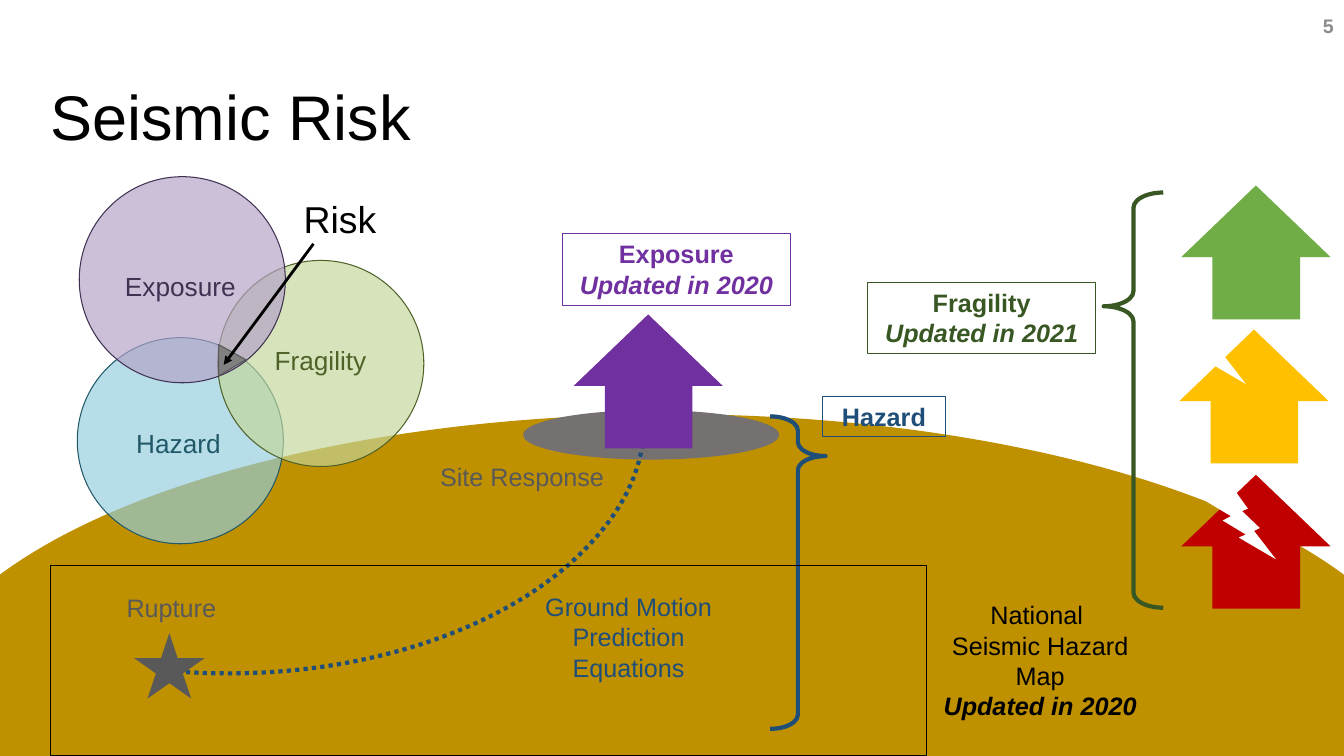
from dataclasses import dataclass
from typing import Any, Optional

from lxml.etree import SubElement
from pptx import Presentation
from pptx.dml.color import RGBColor
from pptx.enum.dml import MSO_LINE
from pptx.enum.shapes import MSO_CONNECTOR, MSO_SHAPE
from pptx.enum.text import MSO_ANCHOR, MSO_AUTO_SIZE, PP_ALIGN
from pptx.oxml.ns import qn
from pptx.util import Pt

FONT = "Arial"
PURPLE, NAVY, FOREST, GRAY, BLACK = "7030A0", "1F4E79", "385723", "595959", "000000"
BOLD = {"bold": True}
ITALIC = {"bold": True, "italic": True}


@dataclass
class Label:
    box: tuple
    lines: tuple
    color: str
    size: float = 18
    outline: bool = False
    inset: Optional[float] = None
    align: Any = PP_ALIGN.CENTER
    anchor: Any = MSO_ANCHOR.TOP


@dataclass
class House:
    left: float
    top: float
    color: str
    crack: Optional[tuple] = None


@dataclass
class Circle:
    name: str
    left: float
    top: float
    fill: str
    ink: str
    label_left: float
    label_top: float


@dataclass
class Brace:
    box: tuple
    color: str
    bend: float
    point: float
    rotation: float = 0


def rgb(code: str) -> RGBColor:
    return RGBColor.from_string(code)


def assign(target: Any, values: dict) -> None:
    for key, value in values.items():
        setattr(target, key, value)


def style_font(font: Any, size: float, color: str, **extra: Any) -> None:
    assign(font, {"name": FONT, "size": Pt(size), **extra})
    font.color.rgb = rgb(color)


def paint(shape: Any, fill: Optional[str] = None, line: Optional[str] = None,
          width: float = 0.75, opacity: int = 100) -> Any:
    shape.shadow.inherit = False
    if fill:
        shape.fill.solid()
        shape.fill.fore_color.rgb = rgb(fill)
        if opacity < 100:
            tint = shape.fill._xPr.find(qn("a:solidFill"))[0]
            SubElement(tint, qn("a:alpha")).set("val", str(opacity * 1000))
    else:
        shape.fill.background()
    if line:
        shape.line.color.rgb = rgb(line)
        shape.line.width = Pt(width)
    else:
        shape.line.fill.background()
    return shape


def draw(shapes: Any, kind: Any, box: tuple, **look: Any) -> Any:
    return paint(shapes.add_shape(kind, *map(Pt, box)), **look)


def add_arrowhead(line: Any) -> None:
    SubElement(line._get_or_add_ln(), qn("a:tailEnd")).set("type", "triangle")


def draw_label(shapes: Any, label: Label) -> None:
    area = shapes.add_textbox(*map(Pt, label.box))
    frame = area.text_frame
    assign(frame, {"word_wrap": True, "vertical_anchor": label.anchor})
    if label.inset is not None:
        sides = ("margin_left", "margin_right", "margin_top", "margin_bottom")
        assign(frame, dict.fromkeys(sides, Pt(label.inset)))
    if label.outline:
        paint(area, line=label.color)
    for index, (wording, extra) in enumerate(label.lines):
        paragraph = frame.add_paragraph() if index else frame.paragraphs[0]
        paragraph.alignment = label.align
        run = paragraph.add_run()
        run.text = wording
        style_font(run.font, label.size, label.color, **extra)


def draw_house(shapes: Any, house: House) -> None:
    walls = (house.left + 22.3, house.top + 36.7, 62.6, 59)
    draw(shapes, MSO_SHAPE.RECTANGLE, walls, fill=house.color)
    roof = (house.left, house.top, 106.6, 51.1)
    draw(shapes, MSO_SHAPE.ISOSCELES_TRIANGLE, roof, fill=house.color)
    if house.crack:
        draw(shapes, MSO_SHAPE.LIGHTNING_BOLT, (*house.crack, 49.7, 50.4), fill="FFFFFF")


def draw_brace(shapes: Any, brace: Brace) -> None:
    shape = draw(shapes, MSO_SHAPE.LEFT_BRACE, brace.box, line=brace.color, width=3)
    shape.adjustments[0], shape.adjustments[1] = brace.bend, brace.point
    shape.rotation = brace.rotation


def draw_ground(shapes: Any) -> None:
    draw(shapes, MSO_SHAPE.OVAL, (-65.5, 295.9, 1090.8, 436.3), fill="BF9000")
    draw(shapes, MSO_SHAPE.OVAL, (373.7, 293, 182.9, 35.3), fill="767171")
    wave = draw(shapes, MSO_SHAPE.ARC, (-134.6, 113.8, 595.4, 367.2), line=NAVY, width=3)
    wave.adjustments[0], wave.adjustments[1] = 154.148, 215.247
    wave._element.spPr.find(qn("a:xfrm")).set("flipV", "1")
    wave.line.dash_style = MSO_LINE.ROUND_DOT
    add_arrowhead(wave.line)
    draw(shapes, MSO_SHAPE.STAR_5_POINT, (95.8, 452.2, 50.4, 46.8), fill=GRAY)


def draw_venn(shapes: Any) -> None:
    for circle in CIRCLES:
        draw(shapes, MSO_SHAPE.OVAL, (circle.left, circle.top, 147.2, 147.2),
             fill=circle.fill, line=circle.ink, opacity=67)
    for circle in CIRCLES:
        box = (circle.label_left, circle.label_top, 146.9, 32.4)
        draw_label(shapes, Label(box, ((circle.name, {}),), circle.ink, 18.7, inset=5))
    overlap = shapes.build_freeform(Pt(156.2), Pt(246.2))
    overlap.add_line_segments([(Pt(175.7), Pt(257)), (Pt(156.2), Pt(268.6))], close=True)
    paint(overlap.convert_to_shape(), fill="808080", line=GRAY)
    draw_label(shapes, Label((210.2, 135.4, 65.5, 41.8), (("Risk", {}),), BLACK, 26.7, inset=5))
    pointer = shapes.add_connector(MSO_CONNECTOR.STRAIGHT, *map(Pt, (223.9, 174.2, 159.8, 260.6)))
    pointer.line.color.rgb = rgb(BLACK)
    pointer.line.width = Pt(2)
    add_arrowhead(pointer.line)
    SubElement(pointer._element.spPr, qn("a:effectLst"))


def write_title(title: Any) -> None:
    assign(title, {"left": Pt(36), "top": Pt(36), "width": Pt(887.8), "height": Pt(77.8)})
    frame = title.text_frame
    frame.text = "Seismic Risk"
    assign(frame, {"auto_size": MSO_AUTO_SIZE.NONE, "word_wrap": True,
                   "vertical_anchor": MSO_ANCHOR.BOTTOM, "margin_left": 0})
    heading = frame.paragraphs[0]
    assign(heading, {"alignment": PP_ALIGN.LEFT, "line_spacing": 0.9})
    style_font(heading.runs[0].font, 45, BLACK)


HOUSES = (
    House(409.7, 224.6, PURPLE),
    House(843.8, 339.1, "C00000", (861.8, 349.2)),
    House(842.4, 235.4, "FFC000", (840.2, 223.9)),
    House(843.8, 132.5, "70AD47"),
)
CIRCLES = (
    Circle("Hazard", 55.2, 241.2, "93CDDD", "215968", 54, 300.2),
    Circle("Fragility", 155.5, 186, "C3D69B", "4F6228", 155.5, 241.2),
    Circle("Exposure", 56.6, 126.2, "B3A2C7", "403152", 55.4, 187.9),
)
BRACES = (
    Brace((550.1, 297.4, 39.6, 223.2), NAVY, 0.255, 0.873, 180),
    Brace((788.4, 137.5, 42.5, 296.6), FOREST, 0.255, 0.274),
)
LABELS = (
    Label((924.5, 0, 35.3, 36), (("5", BOLD),), "8C8C8C", 14,
          align=PP_ALIGN.RIGHT, anchor=MSO_ANCHOR.MIDDLE),
    Label((373, 419, 151.9, 72.7), (("Ground Motion Prediction Equations", {}),), NAVY),
    Label((303.8, 326.2, 138.2, 28.8), (("Site Response", {}),), GRAY),
    Label((61.2, 419.8, 122.4, 28.8), (("Rupture", {}),), GRAY),
    Label((401.8, 167, 162.7, 51.1), (("Exposure", BOLD), ("Updated in 2020", ITALIC)),
          PURPLE, outline=True),
    Label((587.5, 283, 87.8, 28.8), (("Hazard", BOLD),), NAVY, outline=True),
    Label((619.9, 201.6, 162.7, 51.1), (("Fragility", BOLD), ("Updated in 2021", ITALIC)),
          FOREST, outline=True),
    Label((659.5, 424.8, 167, 94.3),
          (("National ", {}), ("Seismic Hazard Map", {}), ("Updated in 2020", ITALIC)), BLACK),
)


def main() -> None:
    deck = Presentation()
    assign(deck, {"slide_width": Pt(960), "slide_height": Pt(540)})
    slide = deck.slides.add_slide(deck.slide_layouts[5])
    shapes = slide.shapes
    write_title(shapes.title)
    draw_ground(shapes)
    for house in HOUSES:
        draw_house(shapes, house)
    for brace in BRACES:
        draw_brace(shapes, brace)
    for label in LABELS:
        draw_label(shapes, label)
    draw_venn(shapes)
    draw(shapes, MSO_SHAPE.RECTANGLE, (36, 403.9, 625.7, 136.1), line=BLACK, width=1)
    deck.save("out.pptx")


if __name__ == "__main__":
    main()
